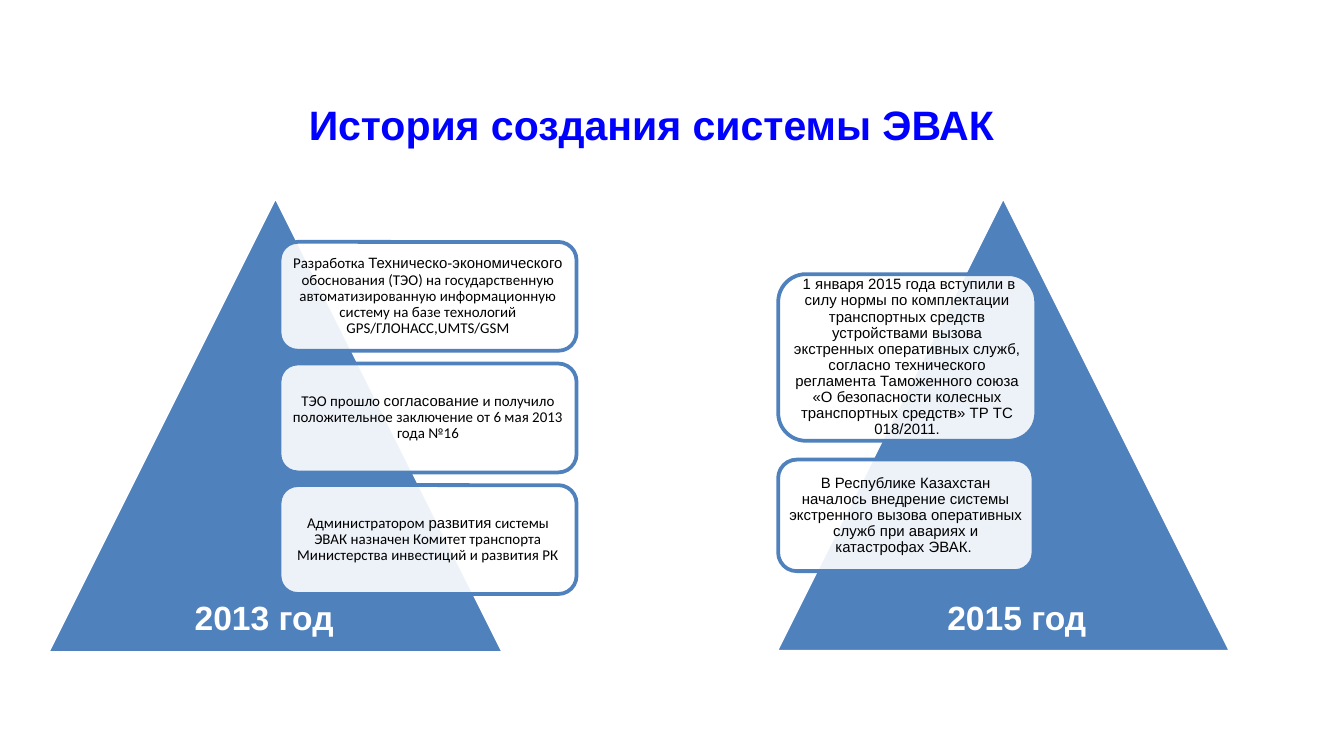
from lxml.etree import SubElement
from pptx import Presentation
from pptx.dml.color import RGBColor
from pptx.enum.shapes import MSO_SHAPE as Shape
from pptx.enum.text import MSO_ANCHOR as Anchor, PP_ALIGN as Align
from pptx.oxml.ns import qn
from pptx.util import Inches, Pt

COLORS = {"blue": "4F81BD", "title": "0000FF", "white": "FFFFFF", "black": "000000"}

# Each card is a list of (text, font) runs
CARDS_2013 = [
    [("Разработка ", "Calibri"), ("Техническо-экономического", "Arial"),
     (" обоснования (ТЭО) на государственную автоматизированную информационную "
      "систему на базе технологий GPS/ГЛОНАСС,UMTS/GSM", "Calibri")],
    [("ТЭО прошло ", "Calibri"), ("согласование", "Arial"),
     (" и получило положительное заключение от 6 мая 2013 года №16", "Calibri")],
    [("Администратором ", "Calibri"), ("развития", "Arial"),
     (" системы ЭВАК назначен Комитет транспорта Министерства инвестиций "
      "и развития РК", "Calibri")],
]
ENTRY_INTO_FORCE = [
    (" 1 января 2015 года вступили в силу нормы по комплектации транспортных средств "
     "устройствами вызова экстренных оперативных служб, согласно технического "
     "регламента Таможенного союза «О безопасности колесных транспортных средств» "
     "ТР ТС 018/2011.", "Arial")]
ROLLOUT = [
    ("В Республике Казахстан началось внедрение системы экстренного вызова "
     "оперативных служб при авариях и катастрофах ЭВАК. ", "Arial")]


def rgb(name):
    return RGBColor.from_string(COLORS[name])


def write_text(shape, runs, *, size, color, bold=False, align=Align.LEFT,
               anchor=Anchor.TOP, margin=None, spacing=None, wrap=True):
    frame = shape.text_frame
    frame.word_wrap = wrap
    frame.vertical_anchor = anchor
    if margin is not None:
        frame.margin_left = frame.margin_right = Inches(margin)
        frame.margin_top = frame.margin_bottom = Inches(margin)
    paragraph = frame.paragraphs[0]
    paragraph.alignment = align
    paragraph.line_spacing = spacing
    for text, font_name in runs:
        run = paragraph.add_run()
        run.text = text
        run.font.name = font_name
        run.font.size = Pt(size)
        run.font.bold = bold
        run.font.color.rgb = rgb(color)


def add_block(slide, kind, box, fill, line):
    shape = slide.shapes.add_shape(kind, *map(Inches, box))
    shape.shadow.inherit = False
    shape.fill.solid()
    shape.fill.fore_color.rgb = rgb(fill)
    shape.line.color.rgb = rgb(line)
    shape.line.width = Pt(2)
    return shape


def add_pyramid(slide, left, top, size):
    add_block(slide, Shape.ISOSCELES_TRIANGLE, (left, top, size, size), "blue", "white")


def add_card(slide, box, runs):
    card = add_block(slide, Shape.ROUNDED_RECTANGLE, box, "white", "blue")
    # 90 % opaque, so the pyramid shows through
    fill_color = card._element.spPr.find(qn("a:solidFill"))[0]
    SubElement(fill_color, qn("a:alpha"), val="90000")
    write_text(card, runs, size=8, color="black", align=Align.CENTER,
               anchor=Anchor.MIDDLE, margin=0.03, spacing=0.9)


def add_label(slide, box, text, **text_format):
    label = slide.shapes.add_textbox(*map(Inches, box))
    write_text(label, [(text, "Arial")], bold=True, **text_format)


def main():
    presentation = Presentation()
    # Widescreen, 16:9
    presentation.slide_width = Inches(10)
    presentation.slide_height = Inches(10) * 9 // 16
    slide = presentation.slides.add_slide(presentation.slide_layouts[6])

    # 2013: pyramid with three evenly spaced cards
    add_pyramid(slide, 0.35, 1.46, 3.4)
    first_top, last_top = 1.8, 3.61
    step = (last_top - first_top) / (len(CARDS_2013) - 1)
    for index, runs in enumerate(CARDS_2013):
        add_card(slide, (2.08, first_top + index * step, 2.21, 0.81), runs)
    add_label(slide, (1.35, 4.39, 1.5, 0.4), "2013 год", size=18, color="white")

    # 2015: pyramid with two cards
    add_pyramid(slide, 5.77, 1.46, 3.39)
    add_card(slide, (5.79, 2.04, 1.92, 1.24), ENTRY_INTO_FORCE)
    add_card(slide, (5.79, 3.42, 1.9, 0.83), ROLLOUT)
    add_label(slide, (6.95, 4.39, 1.26, 0.4), "2015 год", size=18, color="white")

    # Title
    add_label(slide, (2.1, 0.69, 5.48, 0.47), "История создания системы ЭВАК ",
              size=22, color="title", align=Align.RIGHT, wrap=False)

    presentation.save("out.pptx")


if __name__ == "__main__":
    main()
